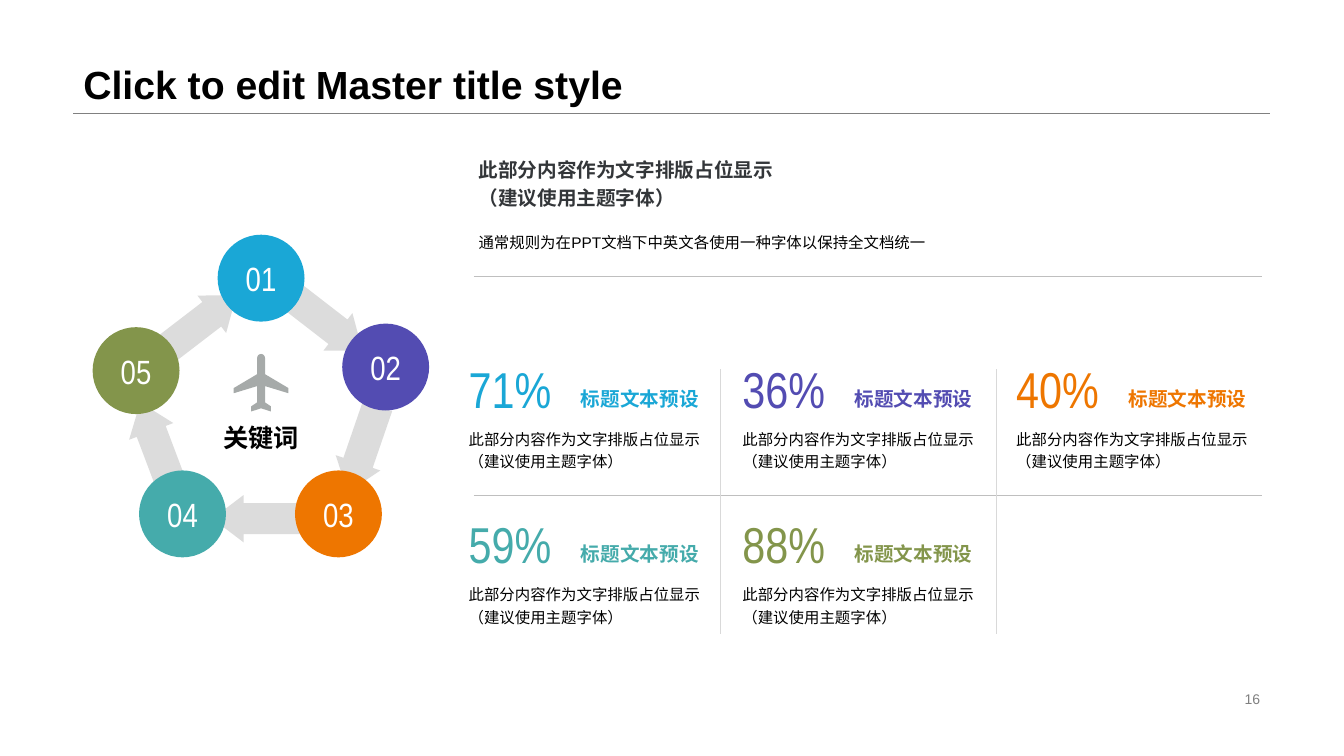
from copy import deepcopy

from lxml.etree import SubElement
from pptx import Presentation
from pptx.dml.color import RGBColor
from pptx.enum.shapes import MSO_CONNECTOR, MSO_SHAPE
from pptx.enum.text import MSO_ANCHOR, MSO_AUTO_SIZE, PP_ALIGN
from pptx.oxml.ns import qn
from pptx.util import Cm, Pt

COLORS = {
    "blue": "1AA7D6",
    "purple": "534CB2",
    "orange": "EE7600",
    "teal": "45ABAB",
    "olive": "83954B",
    "black": "000000",
    "white": "FFFFFF",
    "heading": "333639",
    "arrow": "DCDCDC",
    "plane": "A6AAA9",
    "gray": "808080",
    "rule": "BFBFBF",
    "divider": "D9D9D9",
}
PLACEHOLDER_TEXT = "此部分内容作为文字排版占位显示\n（建议使用主题字体）"
CARD_TITLE = "标题文本预设"

CIRCLES = [
    ("01", 6.58, 7.01, "blue"),
    ("02", 9.72, 9.25, "purple"),
    ("03", 8.53, 12.95, "orange"),
    ("04", 4.6, 12.95, "teal"),
    ("05", 3.43, 9.34, "olive"),
]
ARROWS = [
    (8.23, 8.14, 37.7),
    (9.14, 11.32, 109),
    (6.5, 13.07, 180),
    (3.94, 11.21, 249.3),
    (5.05, 8.14, 322.5),
]
CARDS = [
    ("71%", "blue"),
    ("36%", "purple"),
    ("40%", "orange"),
    ("59%", "teal"),
    ("88%", "olive"),
]
PLANE_HALF = [
    (0, 0), (4, 1), (7, 3), (9, 6), (10, 10), (10, 51), (69, 86), (69, 99),
    (10, 81), (10, 122), (25, 132), (25, 145), (0, 137),
]


def color(name):
    return RGBColor.from_string(COLORS[name])


def write(box, text, size=11, fill="black", font="Arial", bold=False,
          align=PP_ALIGN.LEFT, anchor=MSO_ANCHOR.TOP, spacing=1.0,
          wrap=True, inset=True):
    frame = box.text_frame
    frame.auto_size = MSO_AUTO_SIZE.NONE
    frame.word_wrap = wrap
    frame.vertical_anchor = anchor
    side, edge = (0.25, 0.13) if inset else (0, 0)
    frame.margin_left = frame.margin_right = Cm(side)
    frame.margin_top = frame.margin_bottom = Cm(edge)
    para = frame.paragraphs[0]
    para.text = text
    para.alignment = align
    para.line_spacing = spacing
    for span in para.runs:
        span.font.size = Pt(size)
        span.font.name = font
        span.font.bold = bold
        span.font.color.rgb = color(fill)
    for line_break in para._p.findall(qn("a:br")):
        line_break.append(deepcopy(para.runs[0]._r.rPr))


def add_text(page, left, top, width, height, text, **style):
    box = page.shapes.add_textbox(Cm(left), Cm(top), Cm(width), Cm(height))
    write(box, text, **style)


def paint(shape, fill):
    shape.shadow.inherit = False
    shape.fill.solid()
    shape.fill.fore_color.rgb = color(fill)
    shape.line.fill.background()


def add_centered(page, kind, x, y, width, height, fill):
    shape = page.shapes.add_shape(
        kind, Cm(x - width / 2), Cm(y - height / 2), Cm(width), Cm(height))
    paint(shape, fill)
    return shape


def add_arrow(page, x, y, angle):
    arrow = add_centered(page, MSO_SHAPE.RIGHT_ARROW, x, y, 2.29, 1.19, "arrow")
    arrow.adjustments[0] = 0.655
    arrow.adjustments[1] = 0.657
    arrow.rotation = angle


def add_circle(page, number, x, y, fill):
    circle = add_centered(page, MSO_SHAPE.OVAL, x, y, 2.19, 2.19, fill)
    write(circle, number, size=24, fill="white", font="Arial Narrow",
          align=PP_ALIGN.CENTER, anchor=MSO_ANCHOR.MIDDLE, wrap=False)


def add_plane(page, x, y):
    mirrored = [(-dx, dy) for dx, dy in PLANE_HALF[-2:0:-1]]
    points = [(x * 100 + dx, y * 100 + dy) for dx, dy in PLANE_HALF + mirrored]
    builder = page.shapes.build_freeform(*points[0], scale=Cm(1) / 100)
    builder.add_line_segments(points[1:], close=True)
    paint(builder.convert_to_shape(), "plane")


def add_line(page, x1, y1, x2, y2, stroke):
    line = page.shapes.add_connector(
        MSO_CONNECTOR.STRAIGHT, Cm(x1), Cm(y1), Cm(x2), Cm(y2))
    line.line.color.rgb = color(stroke)
    line.line.width = Pt(0.25)
    SubElement(line._element.spPr, qn("a:effectLst"))


def add_card(page, left, top, percent, fill):
    add_text(page, left, top + 1.73, 6.2, 1.32, PLACEHOLDER_TEXT,
             spacing=1.2, inset=False)
    add_text(page, left, top, 4.67, 1.88, percent, size=36, fill=fill,
             font="Arial Narrow", inset=False)
    add_text(page, left + 2.83, top + 0.66, 3.35, 0.74, CARD_TITLE, size=14,
             fill=fill, bold=True, anchor=MSO_ANCHOR.MIDDLE, wrap=False,
             inset=False)


def add_title(page, text):
    title = page.shapes.title
    title.left, title.top = Cm(1.85), Cm(0)
    title.width, title.height = Cm(30.15), Cm(2.84)
    write(title, text, size=28, bold=True, anchor=MSO_ANCHOR.BOTTOM, spacing=0.9)
    add_line(page, 1.85, 2.84, 32, 2.84, "gray")


def main():
    deck = Presentation()
    deck.slide_width, deck.slide_height = Cm(33.87), Cm(19.05)
    page = deck.slides.add_slide(deck.slide_layouts.get_by_name("Title Only"))

    add_title(page, "Click to edit Master title style")
    add_text(page, 23.93, 17.32, 8.08, 0.58, "16", size=10, fill="gray",
             align=PP_ALIGN.RIGHT, anchor=MSO_ANCHOR.MIDDLE)

    for arrow in ARROWS:
        add_arrow(page, *arrow)
    for circle in CIRCLES:
        add_circle(page, *circle)
    add_plane(page, 6.58, 8.92)
    add_text(page, 5.31, 10.31, 2.54, 1.45, "关键词", size=18, bold=True,
             align=PP_ALIGN.CENTER, anchor=MSO_ANCHOR.MIDDLE, wrap=False)

    add_text(page, 11.81, 3.73, 12.04, 2.03, PLACEHOLDER_TEXT, size=14,
             fill="heading", bold=True, spacing=1.2)
    add_text(page, 11.81, 5.74, 12.04, 1.17,
             "通常规则为在PPT文档下中英文各使用一种字体以保持全文档统一")

    for index, (percent, fill) in enumerate(CARDS):
        row, column = divmod(index, 3)
        add_card(page, 11.81 + column * 6.9, 9.02 + row * 3.91, percent, fill)
    for y in (6.96, 12.47):
        add_line(page, 11.94, y, 31.8, y, "rule")
    for x in (18.14, 25.1):
        add_line(page, x, 9.3, x, 15.98, "divider")

    deck.save("out.pptx")


if __name__ == "__main__":
    main()
